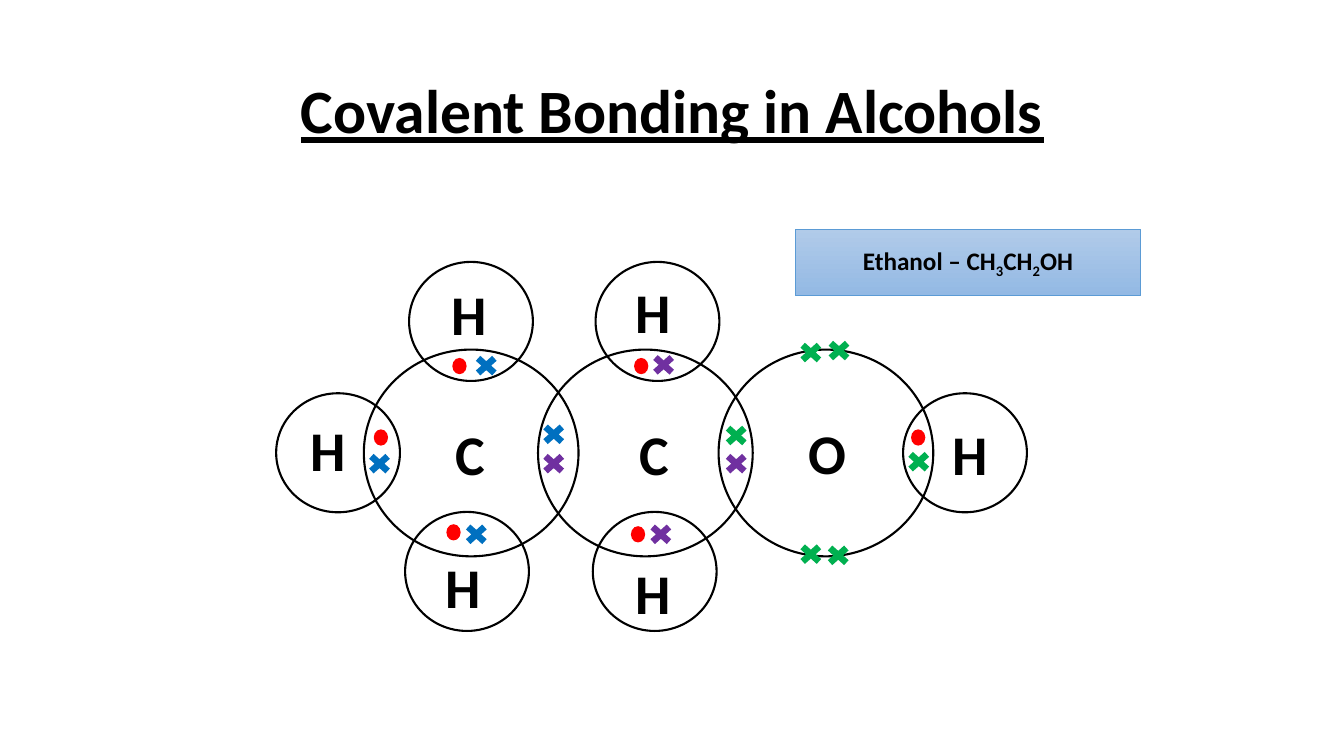
"""Build a slide showing the covalent bonds in ethanol as a dot-and-cross diagram."""
from dataclasses import dataclass
from typing import Optional

from pptx import Presentation
from pptx.dml.color import RGBColor
from pptx.enum.shapes import MSO_SHAPE
from pptx.enum.text import MSO_ANCHOR, MSO_AUTO_SIZE, PP_ALIGN
from pptx.util import Cm, Pt

OVAL = MSO_SHAPE.OVAL
CROSS = MSO_SHAPE.MATH_MULTIPLY
RECTANGLE = MSO_SHAPE.RECTANGLE
MIDDLE = MSO_ANCHOR.MIDDLE
GROW = MSO_AUTO_SIZE.SHAPE_TO_FIT_TEXT
LEFT, CENTER = PP_ALIGN.LEFT, PP_ALIGN.CENTER

BLACK = RGBColor(0x00, 0x00, 0x00)
RED = RGBColor(0xFF, 0x00, 0x00)
PURPLE = RGBColor(0x70, 0x30, 0xA0)
BLUE = RGBColor(0x00, 0x70, 0xC0)
GREEN = RGBColor(0x00, 0xB0, 0x50)
BOX_TOP = RGBColor(0xB1, 0xCB, 0xE9)
BOX_BOTTOM = RGBColor(0x93, 0xB9, 0xE4)
BOX_LINE = RGBColor(0x5B, 0x9B, 0xD5)
FONT = "Calibri"
LABEL_SIZE = (2.24, 1.96)
CROSS_SIZE = (0.79, 0.71)

Place = tuple[float, float]


@dataclass(frozen=True)
class Marks:
    """Equal shapes at several places, outlined in black when unfilled."""
    kind: MSO_SHAPE
    size: Place
    fill: Optional[RGBColor]
    places: tuple[Place, ...]


@dataclass(frozen=True)
class Symbol:
    """An element symbol at several places."""
    text: str
    align: PP_ALIGN
    places: tuple[Place, ...]


MARKS = (
    Marks(OVAL, (5.41, 5.21), None, ((9.17, 8.81), (13.56, 8.81), (18.11, 8.81))),
    Marks(OVAL, (3.12, 3.0), None, (
        (10.31, 6.6), (6.96, 9.91), (10.21, 12.9),
        (15.01, 6.6), (14.94, 12.9), (22.76, 9.91))),
    Marks(OVAL, (0.36, 0.41), RED, (
        (11.4, 9.02), (9.42, 10.82), (11.25, 13.21),
        (15.9, 13.26), (15.98, 9.02), (22.96, 10.82))),
    Marks(CROSS, CROSS_SIZE, BLUE, (
        (11.86, 8.86), (9.17, 11.33), (11.61, 13.11), (13.56, 10.59))),
    Marks(CROSS, CROSS_SIZE, PURPLE, (
        (18.16, 11.33), (13.56, 11.33), (16.33, 8.84), (16.26, 13.11))),
    Marks(CROSS, CROSS_SIZE, GREEN, (
        (18.16, 10.62), (22.76, 11.28), (20.04, 8.53),
        (20.04, 13.61), (20.73, 13.64), (20.75, 8.48))),
)
SYMBOLS = (
    Symbol("H", LEFT, (
        (11.13, 6.91), (15.77, 6.86), (23.75, 10.44),
        (15.77, 13.94), (10.97, 13.79), (7.57, 10.34))),
    Symbol("C", CENTER, ((10.74, 10.44), (15.37, 10.44))),
    Symbol("O", CENTER, ((19.74, 10.41),)),
)
FORMULA = ("Ethanol – CH", "3", "CH", "2", "OH")


def format_run(r, size: float) -> None:
    """Set the bold black type used all over the slide."""
    r.font.name = FONT
    r.font.size = Pt(size)
    r.font.bold = True
    r.font.color.rgb = BLACK


def add_title(s, text: str) -> None:
    """Fill and place the title placeholder."""
    sp = s.shapes.title
    sp.left, sp.top, sp.width, sp.height = Cm(2.34), Cm(1.02), Cm(29.21), Cm(3.68)
    tf = sp.text_frame
    tf.text = text
    tf.vertical_anchor = MIDDLE
    p = tf.paragraphs[0]
    p.alignment = CENTER
    p.line_spacing = 0.9
    r = p.runs[0]
    format_run(r, 44)
    r.font.underline = True


def add_marks(s, marks: Marks) -> None:
    """Draw every shape of one set."""
    width, height = marks.size
    for left, top in marks.places:
        sp = s.shapes.add_shape(marks.kind, Cm(left), Cm(top), Cm(width), Cm(height))
        sp.shadow.inherit = False
        if marks.fill is None:
            sp.fill.background()
            sp.line.color.rgb = BLACK
            sp.line.width = Pt(1.5)
        else:
            sp.fill.solid()
            sp.fill.fore_color.rgb = marks.fill
            sp.line.fill.background()


def add_symbol(s, symbol: Symbol) -> None:
    """Write one element symbol at all its places."""
    width, height = LABEL_SIZE
    for left, top in symbol.places:
        sp = s.shapes.add_textbox(Cm(left), Cm(top), Cm(width), Cm(height))
        tf = sp.text_frame
        tf.word_wrap = True
        tf.auto_size = GROW
        p = tf.paragraphs[0]
        p.text = symbol.text
        p.alignment = symbol.align
        format_run(p.runs[0], 40)


def add_formula_box(s, parts: tuple[str, ...]) -> None:
    """Draw the shaded box, with digits of the formula as subscripts."""
    sp = s.shapes.add_shape(RECTANGLE, Cm(20.04), Cm(5.77), Cm(8.71), Cm(1.68))
    sp.shadow.inherit = False
    sp.fill.gradient()
    sp.fill.gradient_angle = 270
    for stop, color in zip(sp.fill.gradient_stops, (BOX_TOP, BOX_BOTTOM)):
        stop.color.rgb = color
    sp.line.color.rgb = BOX_LINE
    sp.line.width = Pt(0.5)
    tf = sp.text_frame
    tf.vertical_anchor = MIDDLE
    p = tf.paragraphs[0]
    p.alignment = CENTER
    for part in parts:
        r = p.add_run()
        r.text = part
        format_run(r, 18)
        if part.isdigit():
            r.font._element.set("baseline", "-25000")


def main() -> None:
    """Build and save the slide."""
    prs = Presentation()
    prs.slide_width, prs.slide_height = Cm(33.87), Cm(19.05)
    s = prs.slides.add_slide(prs.slide_layouts.get_by_name("Title Only"))
    add_title(s, "Covalent Bonding in Alcohols")
    for marks in MARKS:
        add_marks(s, marks)
    for symbol in SYMBOLS:
        add_symbol(s, symbol)
    add_formula_box(s, FORMULA)
    prs.save("out.pptx")


if __name__ == "__main__":
    main()
